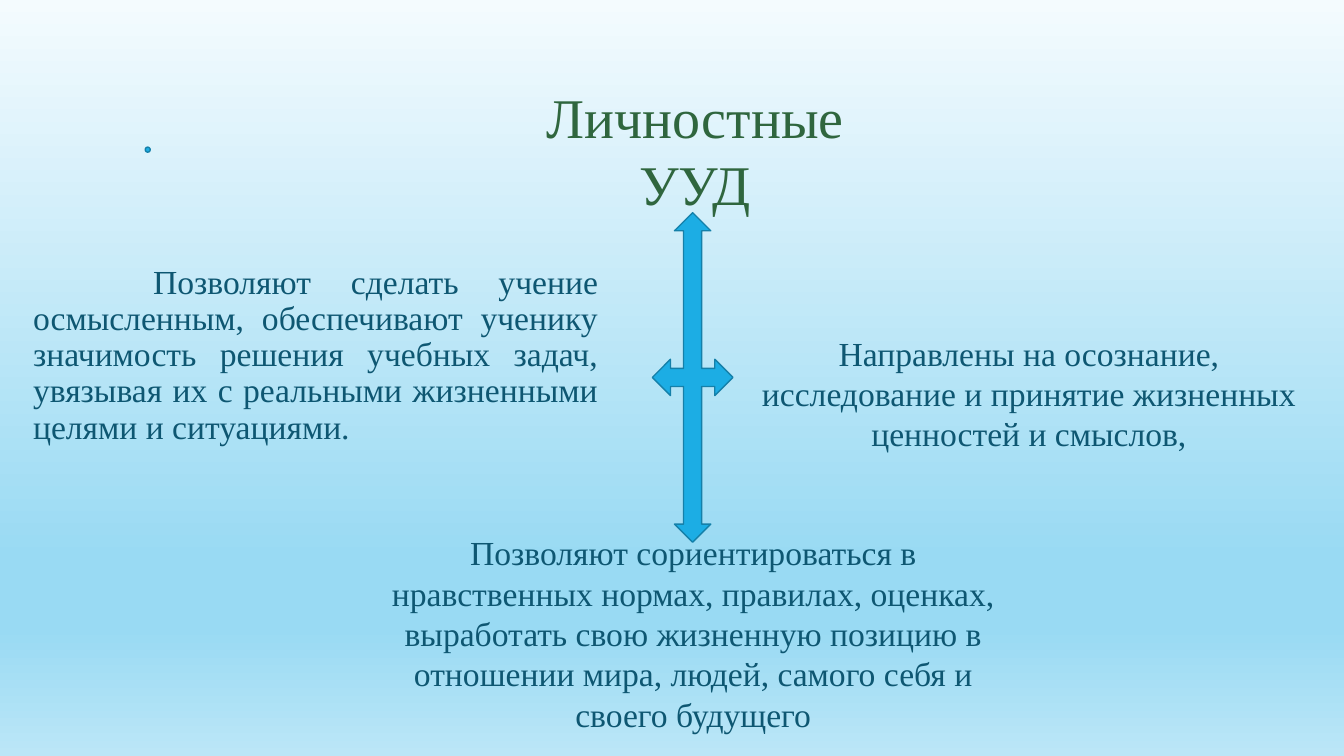
from lxml import etree
from pptx import Presentation
from pptx.dml.color import RGBColor
from pptx.enum.shapes import MSO_SHAPE
from pptx.enum.text import MSO_ANCHOR, PP_ALIGN
from pptx.oxml.ns import qn
from pptx.util import Inches, Pt

# Content
TITLE = ("Личностные", "УУД")
TITLE_BOX = (3.13, 0.77, 7.53, 1.45)
MEANING = ("Позволяют сделать учение осмысленным, обеспечивают ученику значимость "
           "решения учебных задач, увязывая их с реальными жизненными целями и ситуациями.")
VALUES = "Направлены на осознание, исследование и принятие жизненных ценностей и смыслов,"
POSITION = ("Позволяют сориентироваться в нравственных нормах, правилах, оценках, выработать "
            "свою жизненную позицию в отношении мира, людей, самого себя и своего будущего")
# Text, place and format of each description
DESCRIPTIONS = [
    (MEANING, (0.23, 2.58, 5.8, 1.92),
     {"align": PP_ALIGN.JUSTIFY, "spacing": 0.9, "indent": 1.19}),
    (VALUES, (7.28, 3.25, 5.85, 1.31), {}),
    (POSITION, (3.54, 5.23, 6.67, 2.12), {}),
]
SHAPES = [
    (MSO_SHAPE.OVAL, (1.44, 1.46, 0.05, 0.05)),
    (MSO_SHAPE.QUAD_ARROW, (6.47, 2.11, 0.8, 3.27)),
]

FONT = "Times New Roman"
GREEN = RGBColor(0x2F, 0x66, 0x3E)
TEAL = RGBColor(0x0E, 0x57, 0x72)
BLUE = RGBColor(0x1C, 0xAD, 0xE4)
EDGE = RGBColor(0x15, 0x80, 0xA9)
SKY = [
    (0, RGBColor(0xF4, 0xFB, 0xFE)),
    (74, RGBColor(0x99, 0xDA, 0xF3)),
    (83, RGBColor(0x99, 0xDA, 0xF3)),
    (100, RGBColor(0xBB, 0xE6, 0xF7)),
]


def write(box, lines, size=24, color=TEAL, align=PP_ALIGN.CENTER, spacing=1.0, indent=0):
    frame = box.text_frame
    frame.word_wrap = True
    frame.vertical_anchor = MSO_ANCHOR.TOP
    frame.text = "\n".join(lines)
    for para in frame.paragraphs:
        para.alignment = align
        para.line_spacing = spacing
        para.space_before = Pt(0)
        if indent:
            para._p.get_or_add_pPr().set("indent", str(Inches(indent)))
        font = para.runs[0].font
        font.name, font.size, font.color.rgb = FONT, Pt(size), color


deck = Presentation()
deck.slide_width, deck.slide_height = Inches(13.33), Inches(7.5)
page = deck.slides.add_slide(deck.slide_layouts[5])

# Background gradient, top to bottom
fill = page.background.fill
fill.gradient()
fill.gradient_angle = 270
stops = page.background._cSld.find(".//" + qn("a:gsLst"))
for stop in list(stops):
    stops.remove(stop)
for percent, color in SKY:
    stop = etree.SubElement(stops, qn("a:gs"), pos=str(percent * 1000))
    etree.SubElement(stop, qn("a:srgbClr"), val=str(color))

# Dot and four-way arrow
for kind, place in SHAPES:
    shape = page.shapes.add_shape(kind, *map(Inches, place))
    shape.shadow.inherit = False
    shape.fill.solid()
    shape.fill.fore_color.rgb = BLUE
    shape.line.color.rgb = EDGE
    shape.line.width = Pt(1)

# Descriptions around the arrow
for text, place, style in DESCRIPTIONS:
    write(page.shapes.add_textbox(*map(Inches, place)), [text], **style)

# Title
title = page.shapes.title
title.left, title.top, title.width, title.height = map(Inches, TITLE_BOX)
write(title, TITLE, size=40, color=GREEN)

deck.save("out.pptx")
